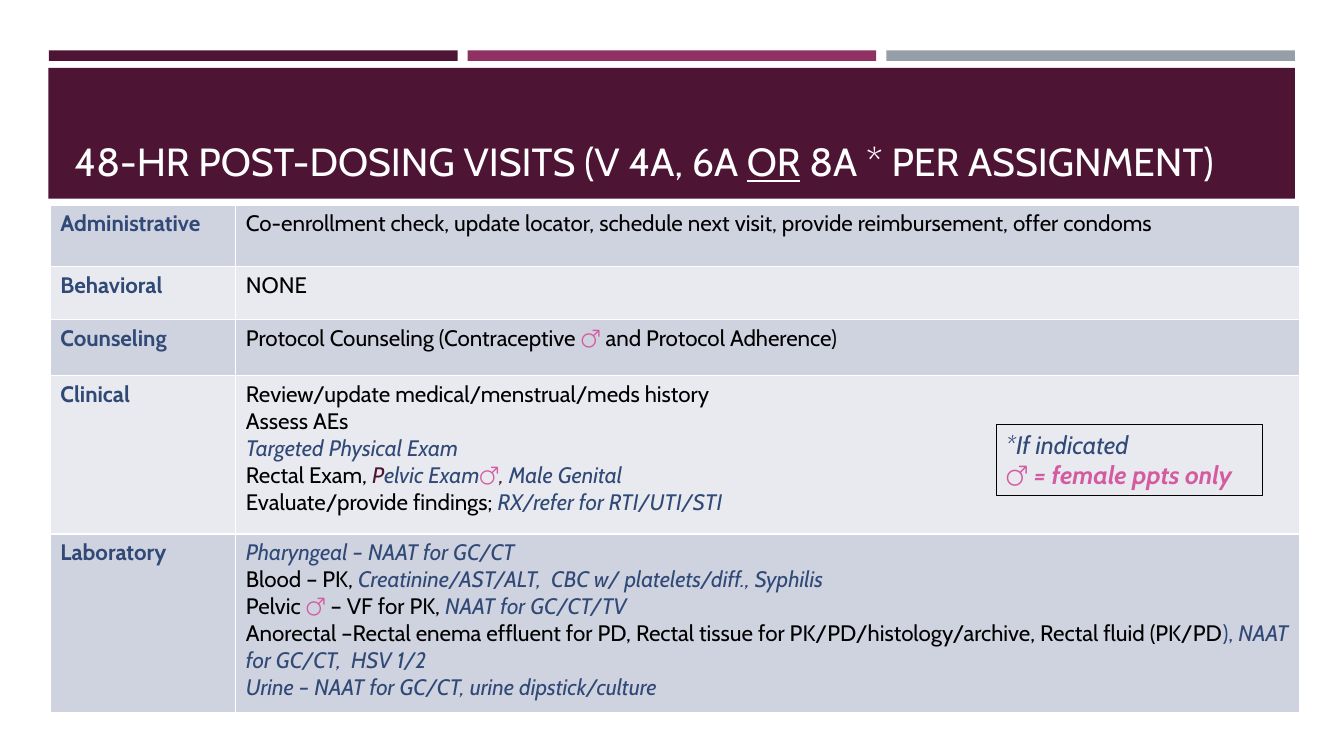
import pptx
import pptx.dml.color
import pptx.enum.shapes
import pptx.enum.text
import pptx.oxml
import pptx.oxml.ns
import pptx.util

Pt = pptx.util.Pt
FONT = "Cabin"
PLUM, NAVY, PINK, BLACK, WHITE = "4D1434", "304976", "D45B9F", "000000", "FFFFFF"
BANDS = ["CFD2DF", "E8EAEF"]
STYLES = {
    "label": (NAVY, True, False),
    "plain": (BLACK, False, False),
    "optional": (NAVY, False, True),
    "upright": (NAVY, False, False),
    "plum": (PLUM, False, True),
    "female": (PINK, True, False),
    "key": (PINK, True, True),
    "title": (WHITE, False, False),
}

VISIT_ROWS = [
    ("Administrative", 44, [
        [("Co-enrollment check, update locator, schedule next visit, "
          "provide reimbursement, offer condoms", "plain")],
    ]),
    ("Behavioral", 38, [[("NONE", "plain")]]),
    ("Counseling", 40, [
        [("Protocol Counseling (Contraceptive ", "plain"), ("♂", "female"),
         (" and Protocol Adherence)", "plain")],
    ]),
    ("Clinical", 113, [
        [("Review/update medical/menstrual/meds history", "plain")],
        [("Assess AEs", "plain")],
        [("Targeted Physical Exam", "optional")],
        [("Rectal Exam, ", "plain"), ("P", "plum"), ("elvic Exam", "optional"),
         ("♂", "female"), (", ", "plum"), ("Male Genital", "optional")],
        [("Evaluate/provide findings; ", "plain"),
         ("RX/refer for RTI/UTI/STI", "optional")],
    ]),
    ("Laboratory", 127.5, [
        [("Pharyngeal – NAAT for GC/CT", "optional")],
        [("Blood – PK, ", "plain"),
         ("Creatinine/AST/ALT,  CBC w/ platelets/diff., Syphilis", "optional")],
        [("Pelvic ", "plain"), ("♂", "female"), (" – VF for PK, ", "plain"),
         ("NAAT for GC/CT/TV", "optional")],
        [("Anorectal –Rectal enema effluent for PD, Rectal tissue for "
          "PK/PD/histology/archive, Rectal fluid (PK/PD", "plain"),
         ("), ", "upright"), ("NAAT for GC/CT,  HSV 1/2", "optional")],
        [("Urine – NAAT for GC/CT, urine dipstick/culture", "optional")],
    ]),
]


def rgb(value):
    return pptx.dml.color.RGBColor.from_string(value)


def add_run(p, text, style, size):
    r = p.add_run()
    r.text = text
    color, r.font.bold, r.font.italic = STYLES[style]
    r.font.name = FONT
    r.font.size = Pt(size)
    r.font.color.rgb = rgb(color)
    return r


def write(tf, paragraphs, size):
    for i, runs in enumerate(paragraphs):
        p = tf.add_paragraph() if i else tf.paragraphs[0]
        p.alignment = pptx.enum.text.PP_ALIGN.LEFT
        for text, style in runs:
            add_run(p, text, style, size)


def add_rect(s, left, top, width, height, fill=None, line=None):
    sp = s.shapes.add_shape(pptx.enum.shapes.MSO_SHAPE.RECTANGLE,
                            Pt(left), Pt(top), Pt(width), Pt(height))
    sp.shadow.inherit = False
    if fill:
        sp.fill.solid()
        sp.fill.fore_color.rgb = rgb(fill)
    else:
        sp.fill.background()
    if line:
        sp.line.color.rgb = rgb(line)
        sp.line.width = Pt(0.75)
    else:
        sp.line.fill.background()
    return sp


def add_stripes(s, left, top, width, height):
    gap = 7.2
    colors = [PLUM, "903163", "969FA7"]
    stripe = (width - gap * (len(colors) - 1)) / len(colors)
    for i, color in enumerate(colors):
        add_rect(s, left + i * (stripe + gap), top, stripe, height, color)


def add_banner(s, left, top, width, height):
    add_rect(s, left, top, width, height, PLUM)
    title = s.shapes.title
    title.left, title.top = Pt(left + 11.5), Pt(top + 7)
    title.width, title.height = Pt(width - 22.5), Pt(height - 13.5)
    title.element.getparent().append(title.element)
    tf = title.text_frame
    tf.word_wrap = True
    tf.vertical_anchor = pptx.enum.text.MSO_ANCHOR.BOTTOM
    write(tf, [[("48-HR POST-DOSING VISITS (V 4A, 6A ", "title"), ("OR", "title"),
                (" 8A * PER ASSIGNMENT)", "title")]], 28)
    tf.paragraphs[0].runs[1].font.underline = True


def add_cell_borders(cell):
    props = cell._tc.get_or_add_tcPr()
    for i, side in enumerate(["lnL", "lnR", "lnT", "lnB"]):
        props.insert(i, pptx.oxml.parse_xml(
            f'<a:{side} {pptx.oxml.ns.nsdecls("a")} w="{Pt(1)}"><a:solidFill>'
            f'<a:srgbClr val="{WHITE}"/></a:solidFill></a:{side}>'))


def add_visit_table(s, left, top, width, label_width):
    height = sum(row[1] for row in VISIT_ROWS)
    table = s.shapes.add_table(len(VISIT_ROWS), 2, Pt(left), Pt(top),
                               Pt(width), Pt(height)).table
    table.first_row = False
    table.horz_banding = False
    table.columns[0].width = Pt(label_width)
    table.columns[1].width = Pt(width - label_width)
    for i, (label, row_height, details) in enumerate(VISIT_ROWS):
        table.rows[i].height = Pt(row_height)
        for j, paragraphs in enumerate([[[(label, "label")]], details]):
            cell = table.cell(i, j)
            cell.fill.solid()
            cell.fill.fore_color.rgb = rgb(BANDS[i % 2])
            add_cell_borders(cell)
            write(cell.text_frame, paragraphs, 16)


def add_key(s, left, top, width, height):
    tf = add_rect(s, left, top, width, height, line=BLACK).text_frame
    tf.word_wrap = True
    tf.vertical_anchor = pptx.enum.text.MSO_ANCHOR.TOP
    write(tf, [[("*If indicated", "optional")],
               [("♂ ", "female"), ("= female ppts only", "key")]], 18)


def main():
    prs = pptx.Presentation()
    prs.slide_width, prs.slide_height = Pt(960), Pt(540)
    s = prs.slides.add_slide(prs.slide_layouts.get_by_name("Title Only"))
    add_stripes(s, 35, 36, 890, 7.5)
    add_banner(s, 34.5, 48.5, 890.5, 93.5)
    add_visit_table(s, 36, 146.5, 892, 132.5)
    add_key(s, 711.5, 303, 190.5, 51)
    prs.save("out.pptx")


if __name__ == "__main__":
    main()
